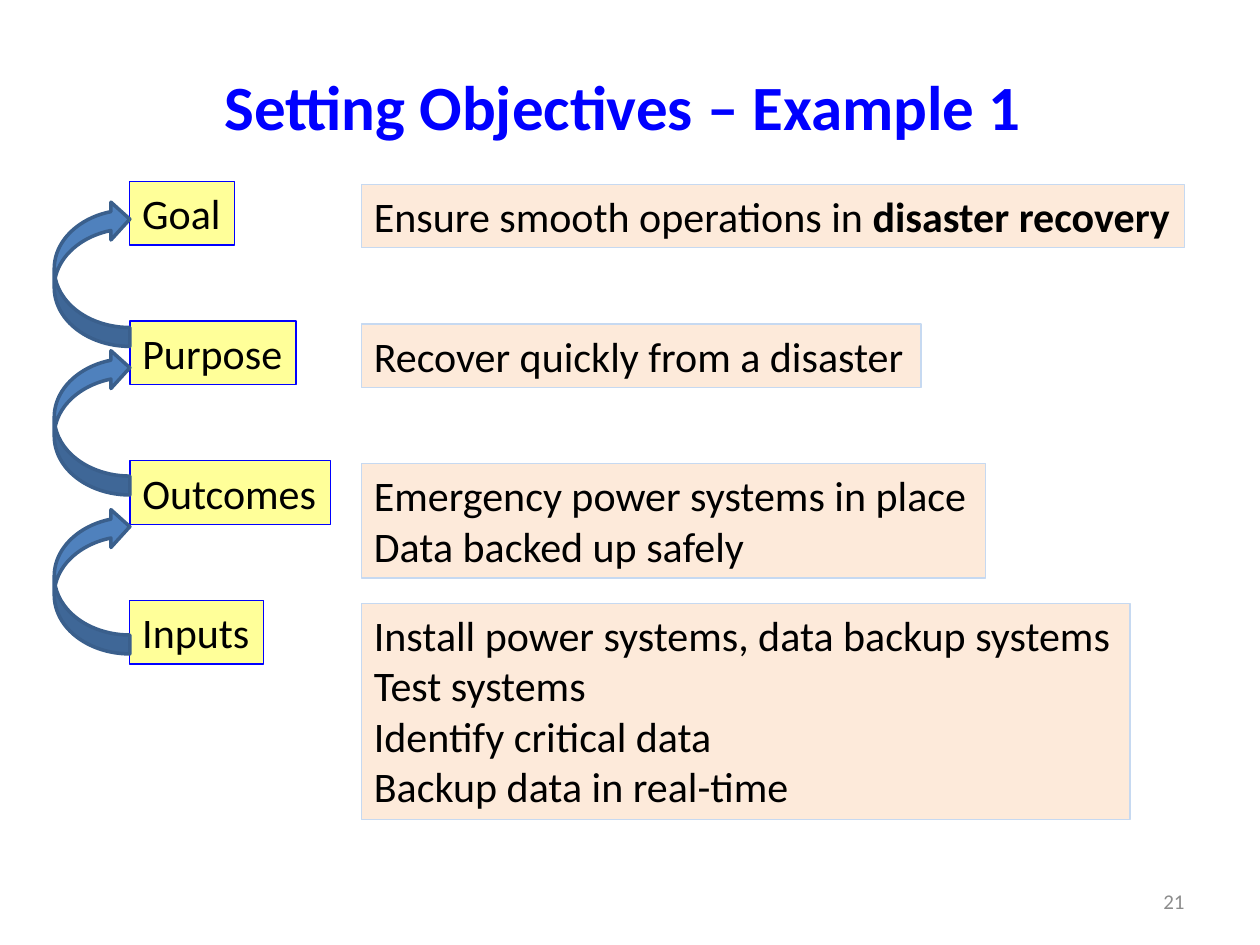
from pptx import Presentation
from pptx.dml.color import RGBColor
from pptx.enum.shapes import MSO_SHAPE
from pptx.enum.text import MSO_ANCHOR, MSO_AUTO_SIZE, PP_ALIGN
from pptx.util import Pt

# Content
TITLE = "Setting Objectives – Example 1 "
PAGE = "21"
# level, label width, detail width, detail lines as (text, bold) runs
LEVELS = [
    ("Goal", 59.8, 470.2,
     [[("Ensure smooth operations in ", False), ("disaster recovery", True)]]),
    ("Purpose", 95, 319.7, [[("Recover quickly from a disaster", False)]]),
    ("Outcomes", 114.5, 356.4,
     [[("Emergency power systems in place", False)],
      [("Data backed up safely", False)]]),
    ("Inputs", 76.3, 439.2,
     [[("Install power systems, data backup systems", False)],
      [("Test systems", False)],
      [("Identify critical data", False)],
      [("Backup data in real-time", False)]]),
]
ARROW_TOPS = [114.5, 199.4, 290.2]

COLORS = {
    "title": "0000FF", "text": "000000", "page": "8C8C8C",
    "label": "FFFF99", "label_line": "0000FF",
    "detail": "FDEADA", "detail_line": "C6D9F1",
    "arrow": "4F81BD", "arrow_line": "3A5F8C",
}
FONT = "Calibri"
LABEL_X, DETAIL_X = 74.2, 206.6
TOP, PITCH, DROP = 103.7, 79.8, 1.6
LINE, PAD = 29.1, 7.2


def color(name):
    return RGBColor.from_string(COLORS[name])


def add_run(para, text, size, name, bold=False):
    run = para.add_run()
    run.text = text
    run.font.name, run.font.size, run.font.bold = FONT, Pt(size), bold
    run.font.color.rgb = color(name)


def add_shape(slide, kind, box, name, weight):
    shape = slide.shapes.add_shape(kind, *map(Pt, box))
    shape.shadow.inherit = False
    shape.fill.solid()
    shape.fill.fore_color.rgb = color(name)
    shape.line.color.rgb = color(name + "_line")
    shape.line.width = Pt(weight)
    return shape


def add_box(slide, x, y, width, lines, name):
    height = LINE * len(lines) + PAD
    shape = add_shape(slide, MSO_SHAPE.RECTANGLE, (x, y, width, height), name, 0.75)
    frame = shape.text_frame
    frame.word_wrap = False
    frame.auto_size = MSO_AUTO_SIZE.SHAPE_TO_FIT_TEXT
    frame.vertical_anchor = MSO_ANCHOR.TOP
    for i, line in enumerate(lines):
        para = frame.add_paragraph() if i else frame.paragraphs[0]
        para.alignment = PP_ALIGN.LEFT
        for text, bold in line:
            add_run(para, text, 24, "text", bold)


def main():
    prs = Presentation()
    prs.slide_width, prs.slide_height = Pt(720), Pt(540)
    slide = prs.slides.add_slide(prs.slide_layouts[5])

    # Title
    title = slide.shapes.title
    title.left, title.top, title.width, title.height = map(Pt, (36, 15.1, 648, 90))
    title.text_frame.vertical_anchor = MSO_ANCHOR.MIDDLE
    para = title.text_frame.paragraphs[0]
    para.alignment = PP_ALIGN.CENTER
    add_run(para, TITLE, 36, "title", True)

    # Level labels
    for i, (label, width, _, _) in enumerate(LEVELS):
        add_box(slide, LABEL_X, TOP + i * PITCH, width, [[(label, False)]], "label")

    # Arrows from each level up to the one above
    for top in ARROW_TOPS:
        arrow = add_shape(slide, MSO_SHAPE.CURVED_RIGHT_ARROW,
                          (31, top, 43.2, 83.5), "arrow", 2)
        arrow._element.spPr.xfrm.set("flipV", "1")

    # Level details
    for i, (_, _, width, lines) in enumerate(LEVELS):
        add_box(slide, DETAIL_X, TOP + DROP + i * PITCH, width, lines, "detail")

    # Page number
    page = slide.shapes.add_textbox(*map(Pt, (516, 500.5, 168, 28.8))).text_frame
    page.word_wrap = True
    page.vertical_anchor = MSO_ANCHOR.MIDDLE
    page.paragraphs[0].alignment = PP_ALIGN.RIGHT
    add_run(page.paragraphs[0], PAGE, 12, "page")

    prs.save("out.pptx")


if __name__ == "__main__":
    main()
